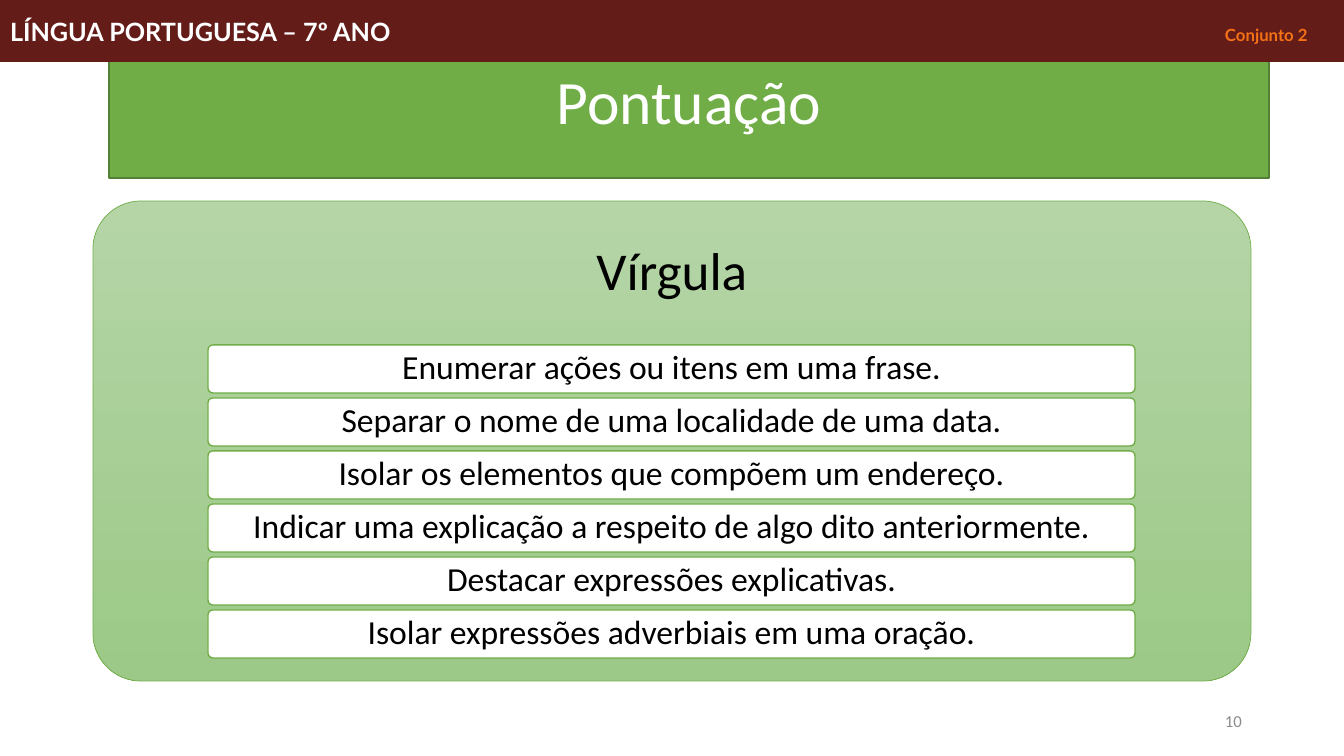
from lxml import etree
from pptx import Presentation, util as u
from pptx.dml.color import RGBColor
from pptx.enum import shapes, text
from pptx.oxml.ns import qn

HUES = {"green": "70AD47", "edge": "538035", "wine": "631C18", "orange": "F47116",
        "white": "FFFFFF", "black": "000000", "gray": "8C8C8C",
        "pale": "B5D5A7", "deep": "9CC987"}
HEAD = "LÍNGUA PORTUGUESA – 7º ANO"
UNIT = "Conjunto 2"
TITLE = "Pontuação"
TOPIC = "Vírgula"
USES = [
    "Enumerar ações ou itens em uma frase.",
    "Separar o nome de uma localidade de uma data.",
    "Isolar os elementos que compõem um endereço.",
    "Indicar uma explicação a respeito de algo dito anteriormente.",
    "Destacar expressões explicativas.",
    "Isolar expressões adverbiais em uma oração.",
]
PAGE = "10"

PANEL = (93, 201, 1158, 480)
TOPBOX = (93, 201, 1158, 144)
ROW = (208, 345, 927, 48)
STEP = 53
BANNER = (109, 32, 1160, 146)
BAR = (0, 0, 1344, 62)
NUMBER = (950, 701, 302, 40)
TAB = 1215

RECT = shapes.MSO_SHAPE.RECTANGLE
ROUND = shapes.MSO_SHAPE.ROUNDED_RECTANGLE
LEFT, MID, RIGHT = text.PP_ALIGN.LEFT, text.PP_ALIGN.CENTER, text.PP_ALIGN.RIGHT


def px(n):
    return round(n * 914400 / 100.8)


def hue(name):
    return RGBColor.from_string(HUES[name])


def put(obj, vals):
    for key, val in vals.items():
        setattr(obj, key, val)


def block(kind, box, line, width, fill=None):
    shape = slide.shapes.add_shape(kind, *map(px, box))
    shape.shadow.inherit = False
    if kind == ROUND:
        shape.adjustments[0] = 0.1
    if fill:
        shape.fill.solid()
        shape.fill.fore_color.rgb = hue(fill)
    shape.line.color.rgb = hue(line)
    shape.line.width = u.Pt(width)
    return shape


def write(shape, runs, align=MID, space=0.9, pad=(10, 5)):
    side, top = map(px, pad)
    frame = shape.text_frame
    put(frame, {"word_wrap": True, "vertical_anchor": text.MSO_ANCHOR.MIDDLE,
                "margin_left": side, "margin_right": side,
                "margin_top": top, "margin_bottom": top})
    para = frame.paragraphs[0]
    put(para, {"alignment": align, "line_spacing": space})
    for words, size, tint, face, bold in runs:
        run = para.add_run()
        run.text = words
        put(run.font, {"size": u.Pt(size), "name": face, "bold": bold})
        run.font.color.rgb = hue(tint)
    return para


deck = Presentation()
put(deck, {"slide_width": px(1344), "slide_height": px(756)})
slide = deck.slides.add_slide(deck.slide_layouts[6])

panel = block(ROUND, PANEL, "green", 0.5)
panel.fill.gradient()
panel.fill.gradient_angle = 270
for stop, tint in zip(panel.fill.gradient_stops, ("pale", "deep")):
    stop.color.rgb = hue(tint)

topic = slide.shapes.add_textbox(*map(px, TOPBOX))
write(topic, [(TOPIC, 38, "black", "Calibri", False)], pad=(16, 16))

left, top, wide, high = ROW
for i, words in enumerate(USES):
    row = block(ROUND, (left, top + i * STEP, wide, high), "green", 1, "white")
    write(row, [(words, 24, "black", "Calibri", False)], pad=(7, 5))

number = slide.shapes.add_textbox(*map(px, NUMBER))
write(number, [(PAGE, 12, "gray", "Calibri", False)], RIGHT, 1.0)

banner = block(RECT, BANNER, "edge", 1, "green")
write(banner, [(TITLE, 44, "white", "Calibri", False)])

bar = block(RECT, BAR, "wine", 0.75, "wine")
para = write(bar, [(HEAD + "\t", 18, "white", "Lato", True),
                   (UNIT, 12, "orange", "Lato", True)], LEFT, 1.0)
tabs = etree.SubElement(para._p.get_or_add_pPr(), qn("a:tabLst"))
etree.SubElement(tabs, qn("a:tab"), pos=str(px(TAB)), algn="l")

deck.save("out.pptx")
